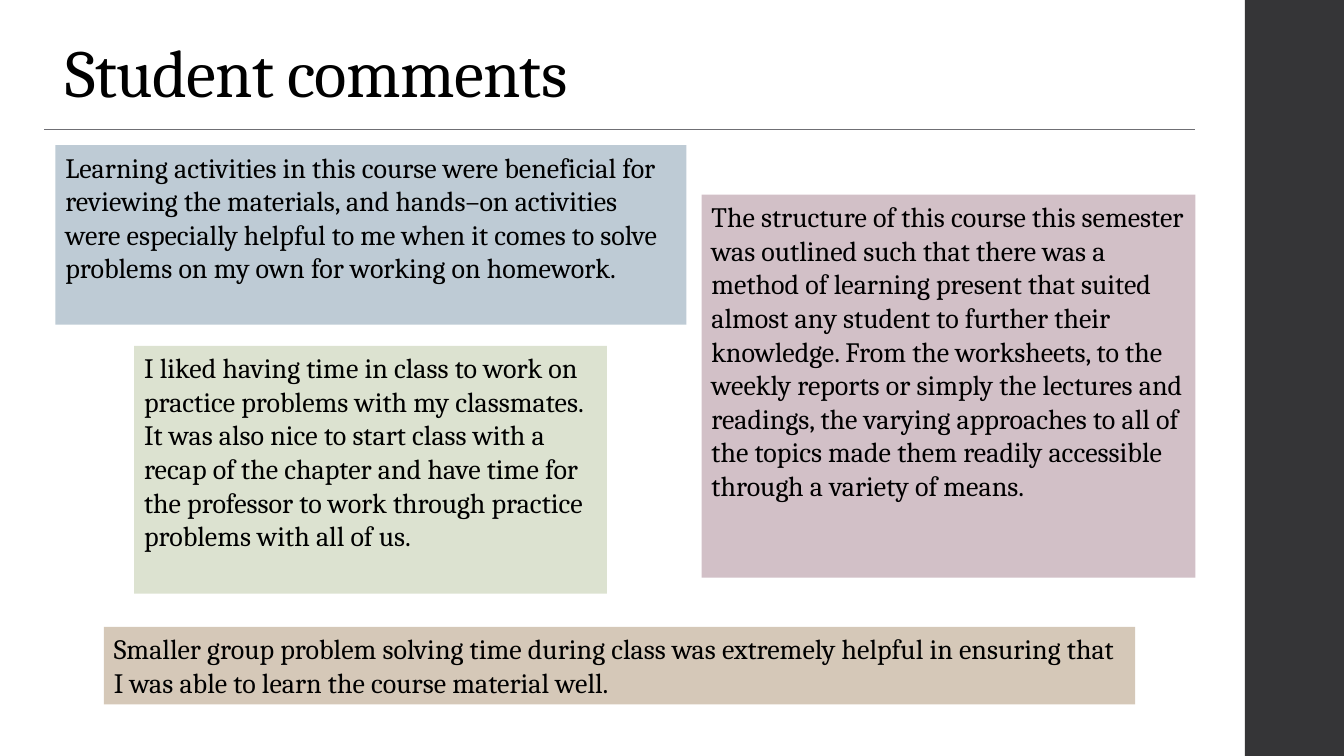
import pptx
import pptx.dml.color
import pptx.enum.shapes
import pptx.enum.text
import pptx.oxml.ns
import pptx.util
from lxml import etree

Pt = pptx.util.Pt
ANCHOR = pptx.enum.text.MSO_ANCHOR
SLIDE_W, SLIDE_H = 960, 540
FONT = "Cambria"
COLORS = {
    "text": "000000",
    "sidebar": "353537",
    "rule": "6F6F74",
    "blue": "BECBD5",
    "mauve": "D2C0C7",
    "green": "DCE2D0",
    "tan": "D5C8B8",
}

# Each comment: box (left, top, width, height), fill, wording
COMMENTS = [
    ((39.6, 103.7, 450.7, 128.2), "blue",
     "Learning activities in this course were beneficial for reviewing the "
     "materials, and hands–on activities were especially helpful to me when it "
     "comes to solve problems on my own for working on homework."),
    ((501.1, 139, 352.8, 273.6), "mauve",
     "The structure of this course this semester was outlined such that there "
     "was a method of learning present that suited almost any student to further "
     "their knowledge. From the worksheets, to the weekly reports or simply the "
     "lectures and readings, the varying approaches to all of the topics made "
     "them readily accessible through a variety of means."),
    ((95.8, 247, 337.7, 177.1), "green",
     "I liked having time in class to work on practice problems with my "
     "classmates. It was also nice to start class with a recap of the chapter "
     "and have time for the professor to work through practice problems with "
     "all of us."),
    ((74.2, 447.8, 736.6, 55.4), "tan",
     "Smaller group problem solving time during class was extremely helpful in "
     "ensuring that I was able to learn the course material well."),
]


def rgb(name):
    return pptx.dml.color.RGBColor.from_string(COLORS[name])


def write(frame, text, size=20, anchor=ANCHOR.TOP, line_spacing=None, tracking=None):
    frame.word_wrap = True
    frame.vertical_anchor = anchor
    paragraph = frame.paragraphs[0]
    paragraph.alignment = pptx.enum.text.PP_ALIGN.LEFT
    paragraph.line_spacing = line_spacing
    run = paragraph.add_run()
    run.text = text
    run.font.name = FONT
    run.font.size = Pt(size)
    run.font.color.rgb = rgb("text")
    if tracking is not None:
        run.font._element.set("spc", str(round(tracking * 100)))


def add_panel(slide, box, fill):
    panel = slide.shapes.add_shape(
        pptx.enum.shapes.MSO_SHAPE.RECTANGLE, *map(Pt, box))
    panel.shadow.inherit = False
    panel.fill.solid()
    panel.fill.fore_color.rgb = rgb(fill)
    panel.line.fill.background()
    return panel


def add_heading(slide, box, text):
    left, top, width, height = box
    title = slide.shapes.add_textbox(
        Pt(left + 7.9), Pt(top), Pt(width + 5.8), Pt(height))
    write(title.text_frame, text, size=48, anchor=ANCHOR.MIDDLE,
          line_spacing=0.9, tracking=-0.5)
    # Rule just below the title
    rule_y = Pt(top + height + 5.8)
    rule = slide.shapes.add_connector(
        pptx.enum.shapes.MSO_CONNECTOR.STRAIGHT,
        Pt(left), rule_y, Pt(left + width), rule_y)
    rule.line.color.rgb = rgb("rule")
    rule.line.width = Pt(0.75)
    etree.SubElement(rule._element.spPr, pptx.oxml.ns.qn("a:effectLst"))


def add_comment(slide, box, fill, text):
    write(add_panel(slide, box, fill).text_frame, text)


def main():
    deck = pptx.Presentation()
    deck.slide_width, deck.slide_height = Pt(SLIDE_W), Pt(SLIDE_H)
    slide = deck.slides.add_slide(deck.slide_layouts[6])

    # Sidebar along the right edge
    sidebar_left = 889.2
    add_panel(slide, (sidebar_left, 0, SLIDE_W - sidebar_left, SLIDE_H), "sidebar")

    # Title and rule
    add_heading(slide, (31.7, 22.3, 822.2, 64.1), "Student comments")

    # Comment boxes
    for box, fill, text in COMMENTS:
        add_comment(slide, box, fill, text)

    deck.save("out.pptx")


if __name__ == "__main__":
    main()
